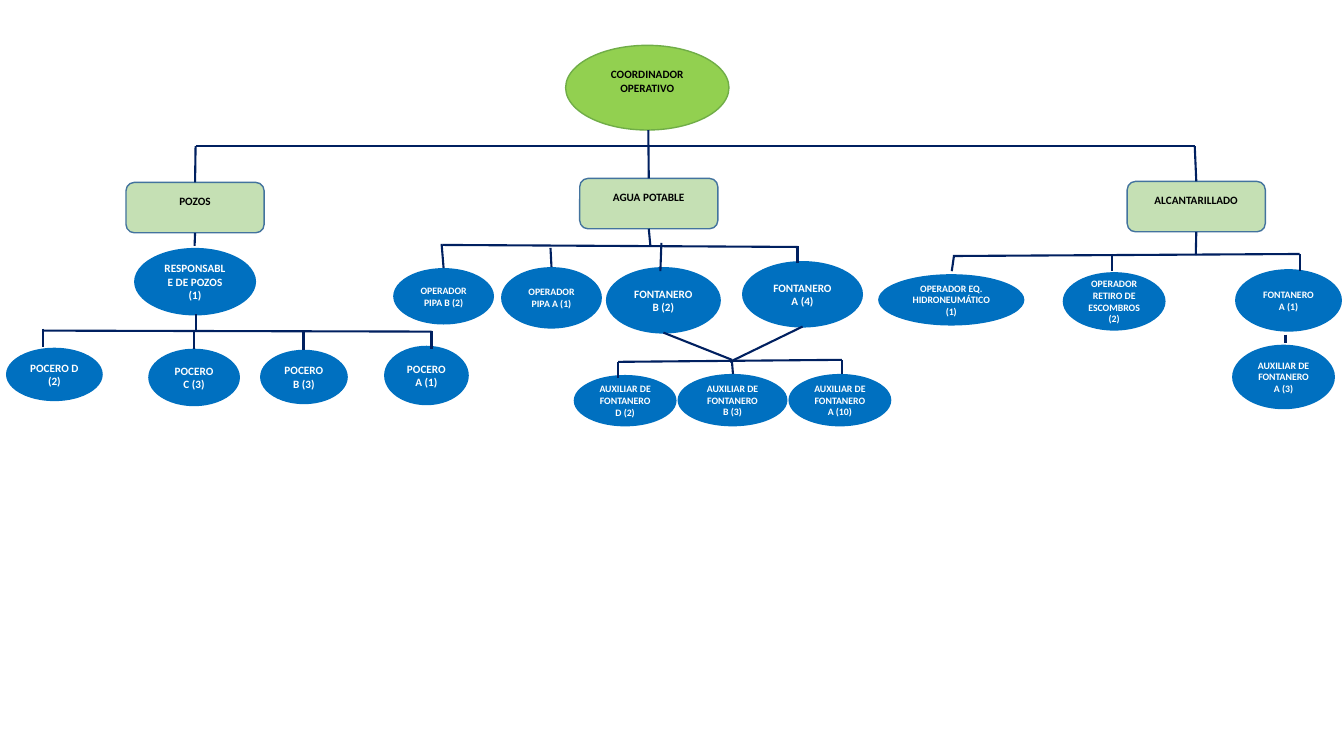
"""Build the organisation chart of the operations coordinator."""
from lxml.etree import SubElement
from pptx import Presentation
from pptx.dml.color import RGBColor
from pptx.enum.shapes import MSO_CONNECTOR, MSO_SHAPE
from pptx.enum.text import MSO_ANCHOR, PP_ALIGN
from pptx.oxml.ns import qn
from pptx.util import Inches, Pt

prs = Presentation()
prs.slide_width, prs.slide_height = Inches(13.33), Inches(7.5)
s = prs.slides.add_slide(prs.slide_layouts[6])
COL, ROW = prs.slide_width / 133.3, prs.slide_height / 75
color = RGBColor.from_string


def add_node(kind, text, size, at, fill, ink, outline=None, lift=0.05):
    x, y, w, h = at
    sp = s.shapes.add_shape(kind, int(x * COL), int(y * ROW), int(w * COL), int(h * ROW))
    sp.shadow.inherit = False
    sp.fill.solid()
    sp.fill.fore_color.rgb = color(fill)
    if outline:
        sp.line.color.rgb = color(outline)
        sp.line.width = Pt(1)
    else:
        sp.line.fill.background()
    tf = sp.text_frame
    tf.word_wrap = True
    tf.vertical_anchor = MSO_ANCHOR.MIDDLE
    tf.margin_bottom = Inches(lift)
    tf.text = text
    for p in tf.paragraphs:
        p.alignment = PP_ALIGN.CENTER
        for r in p.runs:
            r.font.name, r.font.size, r.font.bold = "Calibri", Pt(size), True
            r.font.color.rgb = color(ink)
    return sp


def add_line(x1, y1, x2, y2):
    line = s.shapes.add_connector(MSO_CONNECTOR.STRAIGHT, int(x1 * COL), int(y1 * ROW),
                                  int(x2 * COL), int(y2 * ROW))
    line.line.color.rgb = color("002060")
    line.line.width = Pt(1.5)
    SubElement(line._element.spPr, qn("a:effectLst"))
    return line


posts = [
    ("RESPONSABLE DE POZOS (1)", 8, (13.3, 24.6, 12.1, 6.7)),
    ("POCERO D (2)", 8, (0.6, 34.5, 9.6, 5.3)),
    ("POCERO C (3)", 8, (14.7, 34.6, 9.1, 5.7)),
    ("POCERO B (3)", 8, (25.8, 34.7, 8.7, 5.4)),
    ("POCERO A (1)", 8, (38.1, 34.3, 8.4, 5.9)),
    ("OPERADOR PIPA B (2)", 7, (39, 26.6, 10, 5.6)),
    ("OPERADOR PIPA A (1)", 7, (49.7, 26.5, 10, 6.1)),
    ("FONTANERO B (2)", 8, (60.1, 26.5, 11.4, 6.6)),
    ("FONTANERO A (4)", 8, (73.6, 25.9, 12, 6.6)),
    ("AUXILIAR DE FONTANERO D (2)", 7, (56.9, 37.2, 10.2, 5.1)),
    ("AUXILIAR DE FONTANERO B (3)", 7, (67.2, 37.1, 10.9, 5.2)),
    ("AUXILIAR DE FONTANERO A (10)", 7, (78.2, 37.1, 10.2, 5.2)),
    ("OPERADOR EQ. HIDRONEUMÁTICO (1)", 7, (87.1, 27.2, 14.5, 5.1)),
    ("OPERADOR RETIRO DE ESCOMBROS (2)", 7, (105.4, 27, 10.2, 5.8)),
    ("FONTANERO A (1)", 7, (122.5, 26.7, 10.6, 6.2)),
    ("AUXILIAR DE FONTANERO A (3)", 7, (122.2, 34.2, 10.2, 6.4)),
]
for text, size, at in posts:
    add_node(MSO_SHAPE.OVAL, text, size, at, "0070C0", "FFFFFF")

add_node(MSO_SHAPE.OVAL, "COORDINADOR\nOPERATIVO", 8, (56.1, 4.5, 16.2, 8.4),
         "92D050", "000000", "70AD47", 0.18)

areas = [
    ("POZOS", 12.5, 18.1, 19.4, 14.5, 19.3, 24.4),
    ("AGUA POTABLE", 57.5, 17.7, 64.3, 12.9, 64.5, 24.3),
    ("ALCANTARILLADO", 111.8, 18, 118.5, 14.5, 118.6, 25.3),
]
for text, x, y, top_x, top_y, end_x, end_y in areas:
    area = add_node(MSO_SHAPE.ROUNDED_RECTANGLE, text, 8, (x, y, 13.7, 5),
                    "C5E0B4", "000000", "43739E", 0.18)
    add_line(top_x, top_y, top_x, y).end_connect(area, 0)
    add_line(end_x, y + 5, end_x, end_y).begin_connect(area, 2)

rails = [
    (19.4, 14.5, 118.5, 14.5),
    (4.3, 32.8, 42.8, 32.9),
    (43.9, 24.3, 79.1, 24.5),
    (94.5, 25.4, 128.9, 25.2),
    (61.3, 35.9, 83.5, 35.7),
]
drops = [
    (19.4, 31.2, 19.4, 32.8),
    (4.3, 32.6, 4.3, 34.4),
    (19.2, 32.9, 19.2, 34.6),
    (30.1, 32.9, 30.1, 34.7),
    (42.8, 32.8, 42.8, 34.6),
    (43.8, 24.2, 44, 26.6),
    (54.6, 24.6, 54.7, 26.5),
    (65.6, 24.1, 65.5, 26.9),
    (79.1, 24.4, 79.1, 26.1),
    (65.8, 33, 72.6, 35.7),
    (79.6, 32.4, 72.4, 35.9),
    (61.3, 35.9, 61.3, 37.5),
    (72.6, 35.9, 72.7, 37.1),
    (83.5, 35.7, 83.5, 37.1),
    (94.6, 25.5, 94.4, 26.9),
    (110.3, 25.2, 110.3, 26.9),
    (128.9, 25.2, 128.9, 26.9),
    (127.5, 33.2, 127.5, 34),
]
for ends in rails + drops:
    add_line(*ends)

prs.save("out.pptx")
